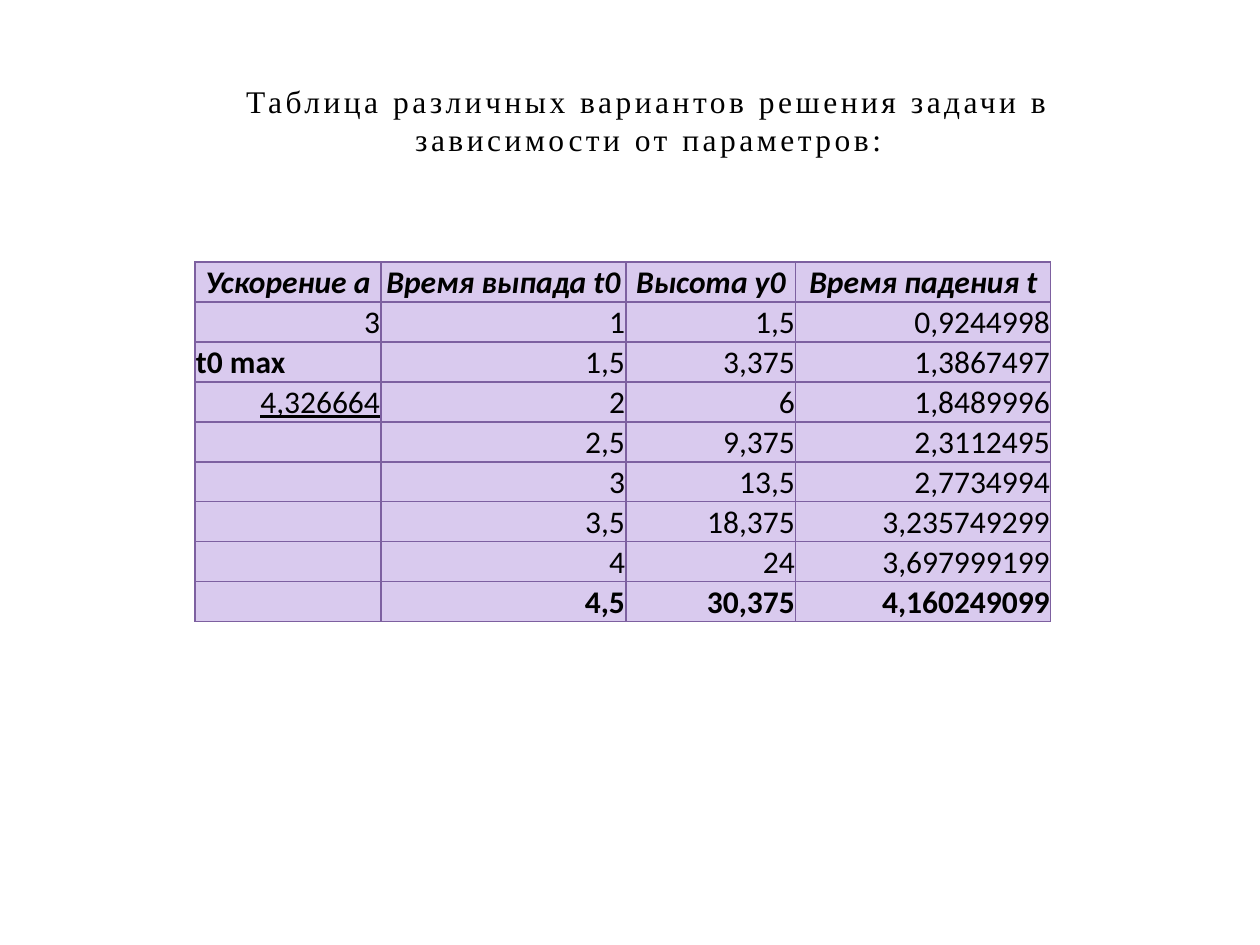
from lxml import etree
from pptx import Presentation
from pptx import util as u
from pptx.dml.color import RGBColor
from pptx.enum import text
from pptx.oxml.ns import qn

PX_PER_INCH = 126
COLORS = {"text": "000000", "cell": "D9CAEE", "border": "7D60A0"}
COLUMN_WIDTHS = [186, 245, 170, 255]
ROW_HEIGHT = 40
HEADERS = ["Ускорение a", "Время выпада t0", "Высота у0", "Время падения t"]
ROWS = [
    ["3", "1", "1,5", "0,9244998"],
    ["t0 max", "1,5", "3,375", "1,3867497"],
    ["4,326664", "2", "6", "1,8489996"],
    ["", "2,5", "9,375", "2,3112495"],
    ["", "3", "13,5", "2,7734994"],
    ["", "3,5", "18,375", "3,235749299"],
    ["", "4", "24", "3,697999199"],
    ["", "4,5", "30,375", "4,160249099"],
]


def px(value):
    """Turn pixels into EMU."""
    return u.Inches(value / PX_PER_INCH)


def write_text(frame, content, align="RIGHT", font="Calibri", size=18,
               bold=False, italic=False, underline=False, spacing=0):
    """Write one formatted paragraph into a text frame."""
    paragraph = frame.paragraphs[0]
    paragraph.alignment = getattr(text.PP_ALIGN, align)
    if not content:
        paragraph.font.size = u.Pt(size)
        return
    run = paragraph.add_run()
    run.text = content
    run.font.name = font
    run.font.size = u.Pt(size)
    run.font.bold = bold
    run.font.italic = italic
    run.font.underline = underline
    run.font.color.rgb = RGBColor.from_string(COLORS["text"])
    if spacing:
        run.font._element.set("spc", str(spacing * 100))


def add_title(slide, content, left, top, width, height):
    """Add the centred, letter-spaced title."""
    shape = slide.shapes.add_textbox(px(left), px(top), px(width), px(height))
    shape.text_frame.word_wrap = True
    shape.text_frame.auto_size = text.MSO_AUTO_SIZE.SHAPE_TO_FIT_TEXT
    write_text(shape.text_frame, content, align="CENTER",
               font="Times New Roman", spacing=2)


def style_cell(cell):
    """Give a cell its borders, fill, margins and anchor."""
    properties = cell._tc.get_or_add_tcPr()
    for side in ("a:lnL", "a:lnR", "a:lnT", "a:lnB"):
        line = etree.SubElement(properties, qn(side), w=str(u.Pt(0.75)))
        fill = etree.SubElement(line, qn("a:solidFill"))
        etree.SubElement(fill, qn("a:srgbClr"), val=COLORS["border"])
    cell.fill.solid()
    cell.fill.fore_color.rgb = RGBColor.from_string(COLORS["cell"])
    cell.margin_left = cell.margin_right = cell.margin_top = px(1)
    cell.margin_bottom = 0
    cell.vertical_anchor = text.MSO_ANCHOR.BOTTOM


def cell_format(row, content):
    """Return the text format for a table cell."""
    if row == 0:
        return {"align": "CENTER", "bold": True, "italic": True}
    if content == "t0 max":
        return {"align": "LEFT", "bold": True}
    return {"bold": row == len(ROWS), "underline": content == "4,326664"}


def add_results_table(slide, left, top):
    """Add the table of solutions."""
    rows = [HEADERS] + ROWS
    table = slide.shapes.add_table(
        len(rows), len(HEADERS), px(left), px(top),
        px(sum(COLUMN_WIDTHS)), px(ROW_HEIGHT * len(rows))).table
    for column, width in zip(table.columns, COLUMN_WIDTHS):
        column.width = px(width)
    for row, values in enumerate(rows):
        table.rows[row].height = px(ROW_HEIGHT)
        for column, content in enumerate(values):
            cell = table.cell(row, column)
            style_cell(cell)
            write_text(cell.text_frame, content, **cell_format(row, content))


def main():
    """Build and save the slide."""
    presentation = Presentation()
    presentation.slide_width = px(1260)
    presentation.slide_height = px(945)
    slide = presentation.slides.add_slide(presentation.slide_layouts[6])
    add_title(slide, "Таблица различных вариантов решения задачи в "
              "зависимости от параметров:", 134, 76, 1029, 89)
    add_results_table(slide, 195, 262)
    presentation.save("out.pptx")


if __name__ == "__main__":
    main()
